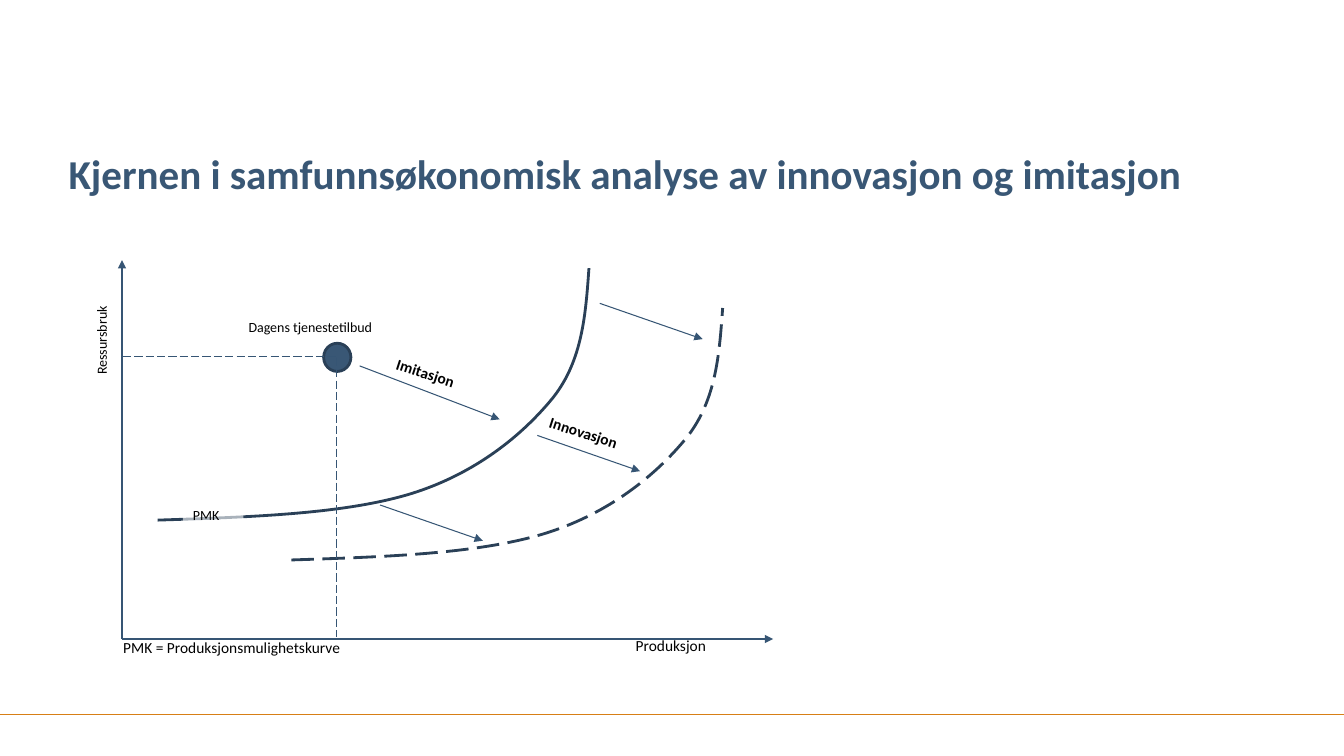
"""Builds a slide on the economics of innovation and imitation."""
from dataclasses import dataclass
from typing import Any

from lxml.etree import SubElement
from pptx import Presentation
from pptx.dml.color import RGBColor
from pptx.enum.dml import MSO_LINE
from pptx.enum.shapes import MSO_CONNECTOR, MSO_SHAPE
from pptx.enum.text import MSO_ANCHOR as Anchor, MSO_AUTO_SIZE as AutoSize, PP_ALIGN as Align
from pptx.oxml.ns import qn
from pptx.util import Inches, Pt

Point = tuple[float, float]
Box = tuple[float, float, float, float]
WIDTH, HEIGHT = Inches(13.33), Inches(7.5)


@dataclass(frozen=True)
class Theme:
    font: str = "Calibri"
    navy: str = "395775"
    axis: str = "365574"
    curve: str = "2A4057"
    rule: str = "D77F16"
    ink: str = "000000"
    paper: str = "FFFFFF"
    title_size: float = 29.3
    label_size: float = 11
    small_size: float = 10
    thin: float = 0.75
    medium: float = 1.5
    thick: float = 2


THEME = Theme()


@dataclass(frozen=True)
class Line:
    start: Point
    end: Point
    color: str = THEME.axis
    weight: float = THEME.thin
    arrow: bool = False
    dashed: bool = False


@dataclass(frozen=True)
class Label:
    text: str
    box: Box
    size: float = THEME.label_size
    bold: bool = False
    rotation: float = 0
    veil: bool = False


ORIGIN: Point = (9.08, 84.53)
SERVICE_TODAY: Point = (25.05, 47.33)
SHIFT: Point = (7.65, 4.73)
FRONTIER: list[Point] = [
    (11.73, 68.8), (18.68, 68.4), (25.58, 68), (30.53, 65.33), (35.4, 62.67),
    (38.93, 57.47), (41.18, 52.53), (43.35, 47.6), (43.58, 41.47), (43.82, 35.47),
]
NEW_FRONTIER: list[Point] = [(x + 9.95, y + 5.27) for x, y in FRONTIER]
SHIFT_STARTS: list[Point] = [(39.98, 57.6), (28.28, 66.8), (44.63, 40.13)]

LINES = [
    Line((0, 94.53), (100, 94.53), THEME.rule),
    Line(ORIGIN, (ORIGIN[0], 34.4), weight=THEME.medium, arrow=True),
    Line(ORIGIN, (57.53, ORIGIN[1]), weight=THEME.medium, arrow=True),
    Line((9.15, 47.1), (SERVICE_TODAY[0], 47.1), dashed=True),
    Line(SERVICE_TODAY, (SERVICE_TODAY[0], 84.27), dashed=True),
    Line((26.76, 48.4), (37.18, 55.47), arrow=True),
    *[Line((x, y), (x + SHIFT[0], y + SHIFT[1]), arrow=True) for x, y in SHIFT_STARTS],
]
LABELS = [
    Label("Ressursbruk", (3.3, 40.2, 8.93, 5.47), THEME.small_size, rotation=270),
    Label("Produksjon", (46.56, 83.33, 8.78, 5.73)),
    Label("PMK", (13.62, 65.73, 4.5, 4.67), THEME.small_size, veil=True),
    Label("PMK = Produksjonsmulighetskurve", (8.43, 83.6, 22.8, 5.47)),
    Label("Dagens tjenestetilbud", (17.76, 40.93, 13.88, 6.13), THEME.small_size),
    Label("Imitasjon", (28.48, 47.73, 7.73, 6.13), bold=True, rotation=18),
    Label("Innovasjon", (39.96, 55.73, 8.78, 4.67), bold=True, rotation=18),
]


def place(point: Point) -> tuple[int, int]:
    """Turns percentages of the slide into lengths."""
    return round(WIDTH * point[0] / 100), round(HEIGHT * point[1] / 100)


def frame(box: Box) -> tuple[int, int, int, int]:
    """Turns a box in percentages into lengths."""
    return place(box[:2]) + place(box[2:])


def apply(target: Any, values: dict[str, Any]) -> None:
    """Sets each named format value."""
    for name, value in values.items():
        setattr(target, name, value)


def paint_line(line: Any, color: str, weight: float, dashed: bool = False) -> None:
    """Formats an outline or connector line."""
    line.fill.solid()
    line.fill.fore_color.rgb = RGBColor.from_string(color)
    line.width = Pt(weight)
    if dashed:
        line.dash_style = MSO_LINE.LONG_DASH


def paint_fill(shape: Any, color: str) -> None:
    """Gives a shape a solid fill."""
    shape.fill.solid()
    shape.fill.fore_color.rgb = RGBColor.from_string(color)


def paint_font(font: Any, color: str, size: float, bold: bool) -> None:
    """Formats a font from the theme."""
    apply(font, {"name": THEME.font, "size": Pt(size), "bold": bold})
    font.color.rgb = RGBColor.from_string(color)


def draw_title(slide: Any, text: str) -> None:
    """Fills the title placeholder."""
    title = slide.shapes.title
    left, top, width, height = frame((5.1, 14.27, 89.85, 11.87))
    apply(title, {"left": left, "top": top, "width": width, "height": height})
    apply(title.text_frame, {
        "text": text, "word_wrap": True, "auto_size": AutoSize.NONE,
        "vertical_anchor": Anchor.BOTTOM, "margin_left": 0, "margin_right": 0,
        "margin_top": 0, "margin_bottom": 0,
    })
    heading = title.text_frame.paragraphs[0]
    apply(heading, {"alignment": Align.LEFT, "line_spacing": Pt(32)})
    paint_font(heading.runs[0].font, THEME.navy, THEME.title_size, True)


def draw_line(slide: Any, spec: Line) -> None:
    """Draws a straight line, dashed or with an arrowhead as asked."""
    connector = slide.shapes.add_connector(
        MSO_CONNECTOR.STRAIGHT, *place(spec.start), *place(spec.end))
    paint_line(connector.line, spec.color, spec.weight, spec.dashed)
    if spec.arrow:
        SubElement(connector.line._get_or_add_ln(), qn("a:tailEnd"), type="triangle")
    SubElement(connector._element.spPr, qn("a:effectLst"))


def draw_frontier(slide: Any, controls: list[Point], dashed: bool) -> None:
    """Draws a possibility curve, joining each three control points into one cubic."""
    builder = slide.shapes.build_freeform(*place(controls[0]))
    builder.add_line_segments([place(point) for point in controls[1:]], close=False)
    frontier = builder.convert_to_shape()
    outline = frontier._element.spPr.find(f".//{qn('a:path')}")
    segments = outline.findall(qn("a:lnTo"))
    for first in range(0, len(segments), 3):
        cubic = SubElement(outline, qn("a:cubicBezTo"))
        for segment in segments[first:first + 3]:
            cubic.append(segment[0])
            outline.remove(segment)
    frontier.shadow.inherit = False
    frontier.fill.background()
    paint_line(frontier.line, THEME.curve, THEME.thick, dashed)


def draw_label(slide: Any, label: Label) -> None:
    """Writes a label, over a translucent veil if asked."""
    if label.veil:
        holder = slide.shapes.add_shape(MSO_SHAPE.RECTANGLE, *frame(label.box))
        holder.shadow.inherit = False
        paint_fill(holder, THEME.paper)
        SubElement(holder.fill._xPr.find(f".//{qn('a:srgbClr')}"), qn("a:alpha"), val="60000")
        holder.line.fill.background()
    else:
        holder = slide.shapes.add_textbox(*frame(label.box))
    holder.rotation = label.rotation
    apply(holder.text_frame, {
        "text": label.text, "word_wrap": True, "vertical_anchor": Anchor.TOP})
    small = label.size == THEME.small_size
    caption = holder.text_frame.paragraphs[0]
    apply(caption, {"alignment": Align.JUSTIFY if small else Align.LEFT,
                    "line_spacing": 1.25 if small else 1.06,
                    "space_after": Pt(10 if small else 8)})
    paint_font(caption.runs[0].font, THEME.ink, label.size, label.bold)


def main() -> None:
    """Builds and saves the slide."""
    deck = Presentation()
    apply(deck, {"slide_width": WIDTH, "slide_height": HEIGHT})
    slide = deck.slides.add_slide(deck.slide_layouts[5])
    draw_title(slide, "Kjernen i samfunnsøkonomisk analyse av innovasjon og imitasjon")
    draw_frontier(slide, FRONTIER, dashed=False)
    draw_frontier(slide, NEW_FRONTIER, dashed=True)
    service = slide.shapes.add_shape(MSO_SHAPE.OVAL, *frame((24.08, 45.4, 2.03, 3.73)))
    service.shadow.inherit = False
    paint_fill(service, THEME.navy)
    paint_line(service.line, THEME.curve, THEME.thick)
    for line in LINES:
        draw_line(slide, line)
    for label in LABELS:
        draw_label(slide, label)
    deck.save("out.pptx")


if __name__ == "__main__":
    main()
